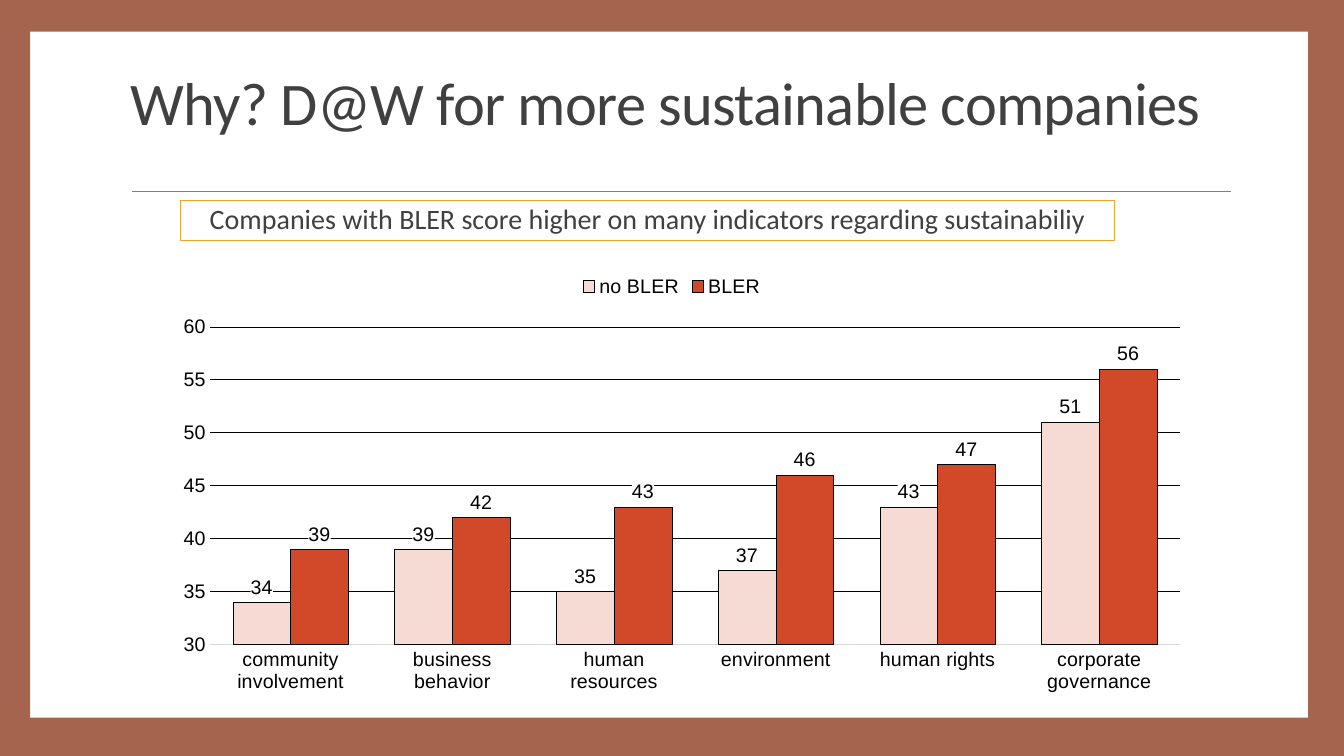
import dataclasses

import lxml.etree
import pptx
import pptx.chart.data
import pptx.dml.color
import pptx.enum.chart
import pptx.enum.shapes
import pptx.enum.text
import pptx.oxml
import pptx.oxml.ns
import pptx.util

Pt = pptx.util.Pt
qn = pptx.oxml.ns.qn
RGBColor = pptx.dml.color.RGBColor


@dataclasses.dataclass(frozen=True)
class Theme:
    white: RGBColor = RGBColor.from_string("FFFFFF")
    black: RGBColor = RGBColor.from_string("000000")
    text: RGBColor = RGBColor.from_string("404040")
    frame: RGBColor = RGBColor.from_string("A5644E")
    rule: RGBColor = RGBColor.from_string("808080")
    axis: RGBColor = RGBColor.from_string("D9D9D9")
    callout: RGBColor = RGBColor.from_string("F0A22E")
    without_bler: RGBColor = RGBColor.from_string("F6DAD4")
    with_bler: RGBColor = RGBColor.from_string("D2492A")
    text_font: str = "Calibri"
    chart_font: str = "Arial"
    title_size: float = 43.2
    callout_size: float = 20
    chart_size: float = 14


theme = Theme()


def style_font(font, name, size, color):
    font.name = name
    font.size = Pt(size)
    font.color.rgb = color


def white_fill():
    """Return chart shape properties with a white fill and no outline."""
    return pptx.oxml.parse_xml(
        f'<c:spPr {pptx.oxml.ns.nsdecls("c", "a")}>'
        f'<a:solidFill><a:srgbClr val="{theme.white}"/></a:solidFill>'
        "<a:ln><a:noFill/></a:ln></c:spPr>"
    )


presentation = pptx.Presentation()
presentation.slide_width = Pt(960)
presentation.slide_height = Pt(540)
slide = presentation.slides.add_slide(presentation.slide_layouts[6])
slide.background.fill.solid()
slide.background.fill.fore_color.rgb = theme.white

# Frame: bottom, top, left, right
frame_bars = [
    (0, 512.6, 960, 27.4),
    (0, 0, 960, 22.7),
    (0, 0, 21.6, 540),
    (934.5, 0, 25.5, 540),
]
for bounds in frame_bars:
    bar = slide.shapes.add_shape(
        pptx.enum.shapes.MSO_SHAPE.RECTANGLE, *map(Pt, bounds)
    )
    bar.shadow.inherit = False
    bar.fill.solid()
    bar.fill.fore_color.rgb = theme.frame
    bar.line.fill.background()

# Title and rule
rule = slide.shapes.add_connector(
    pptx.enum.shapes.MSO_CONNECTOR.STRAIGHT, Pt(94.3), Pt(136.8), Pt(879), Pt(136.8)
)
rule.line.color.rgb = theme.rule
rule.line.width = Pt(0.5)
lxml.etree.SubElement(rule._element.spPr, qn("a:effectLst"))

title = slide.shapes.add_textbox(Pt(86.4), Pt(51.1), Pt(792), Pt(82.8))
title.text_frame.word_wrap = True
title.text_frame.vertical_anchor = pptx.enum.text.MSO_ANCHOR.TOP
paragraph = title.text_frame.paragraphs[0]
paragraph.line_spacing = 0.85
run = paragraph.add_run()
run.text = "Why? D@W for more sustainable companies"
style_font(run.font, theme.text_font, theme.title_size, theme.text)
run.font._element.set("spc", "-50")

# Chart
chart_data = pptx.chart.data.CategoryChartData(number_format="0")
chart_data.categories = [
    "community involvement",
    "business behavior",
    "human resources",
    "environment",
    "human rights",
    "corporate governance",
]
chart_data.add_series("no BLER", [34, 39, 35, 37, 43, 51])
chart_data.add_series("BLER", [39, 42, 43, 46, 47, 56])
chart = slide.shapes.add_chart(
    pptx.enum.chart.XL_CHART_TYPE.COLUMN_CLUSTERED,
    Pt(112.3), Pt(188.6), Pt(735.1), Pt(313.2),
    chart_data,
).chart
style_font(chart.font, theme.chart_font, theme.chart_size, theme.black)
chart.has_title = False
chart.has_legend = True
chart.legend.position = pptx.enum.chart.XL_LEGEND_POSITION.TOP
chart.legend.include_in_layout = False
style_font(chart.legend.font, theme.chart_font, theme.chart_size, theme.black)

for axis in (chart.category_axis, chart.value_axis):
    axis.major_tick_mark = pptx.enum.chart.XL_TICK_MARK.NONE
    axis.minor_tick_mark = pptx.enum.chart.XL_TICK_MARK.NONE
    style_font(axis.tick_labels.font, theme.chart_font, theme.chart_size, theme.black)
chart.category_axis.format.line.color.rgb = theme.axis
chart.category_axis.format.line.width = Pt(0.75)

value_axis = chart.value_axis
value_axis.minimum_scale = 30
value_axis.maximum_scale = 60
value_axis.major_unit = 5
value_axis.tick_labels.number_format = "#,##0"
value_axis.tick_labels.number_format_is_linked = False
value_axis.format.line.fill.background()
value_axis.has_major_gridlines = True
value_axis.major_gridlines.format.line.color.rgb = theme.black
value_axis.major_gridlines.format.line.width = Pt(0.25)

plot = chart.plots[0]
plot.gap_width = 80
plot.overlap = 0
plot.vary_by_categories = False
for series, color in zip(plot.series, (theme.without_bler, theme.with_bler)):
    series.format.fill.solid()
    series.format.fill.fore_color.rgb = color
    series.format.line.color.rgb = theme.black
    series.format.line.width = Pt(0.25)
    labels = series.data_labels
    labels.show_value = True
    labels.number_format = "0"
    labels.number_format_is_linked = False
    labels.position = pptx.enum.chart.XL_LABEL_POSITION.OUTSIDE_END
    style_font(labels.font, theme.chart_font, theme.chart_size, theme.black)
    labels._element.find(qn("c:numFmt")).addnext(white_fill())

chart_element = chart._chartSpace.find(qn("c:chart"))
chart_element.addnext(white_fill())
plot_area = chart_element.find(qn("c:plotArea"))
layout = plot_area.find(qn("c:layout"))
if layout is None:
    layout = lxml.etree.Element(qn("c:layout"))
    plot_area.insert(0, layout)
manual_layout = lxml.etree.SubElement(layout, qn("c:manualLayout"))
layout_values = {
    "layoutTarget": "inner",
    "xMode": "edge",
    "yMode": "edge",
    "x": "0.051",
    "y": "0.143",
    "w": "0.943",
    "h": "0.725",
}
for name, value in layout_values.items():
    lxml.etree.SubElement(manual_layout, qn(f"c:{name}")).set("val", value)

# Callout
callout = slide.shapes.add_shape(
    pptx.enum.shapes.MSO_SHAPE.RECTANGLE, Pt(128.9), Pt(143.3), Pt(667.4), Pt(28.8)
)
callout.shadow.inherit = False
callout.fill.background()
callout.line.color.rgb = theme.callout
callout.line.width = Pt(0.75)
text_frame = callout.text_frame
text_frame.word_wrap = True
text_frame.margin_left = text_frame.margin_right = Pt(0)
text_frame.margin_top = text_frame.margin_bottom = Pt(3.6)
text_frame.vertical_anchor = pptx.enum.text.MSO_ANCHOR.MIDDLE
paragraph = text_frame.paragraphs[0]
paragraph.alignment = pptx.enum.text.PP_ALIGN.CENTER
paragraph.line_spacing = 0.9
run = paragraph.add_run()
run.text = "Companies with BLER score higher on many indicators regarding sustainabiliy"
style_font(run.font, theme.text_font, theme.callout_size, theme.text)

presentation.save("out.pptx")
